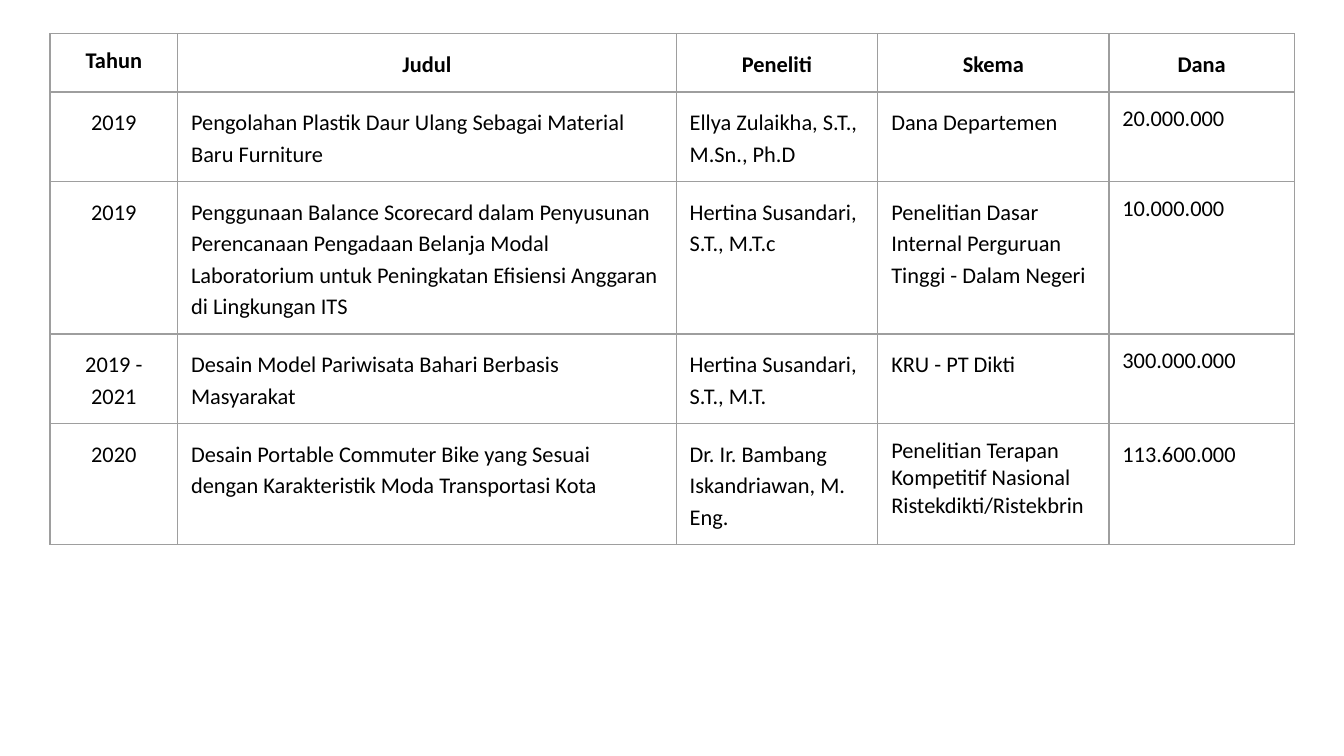
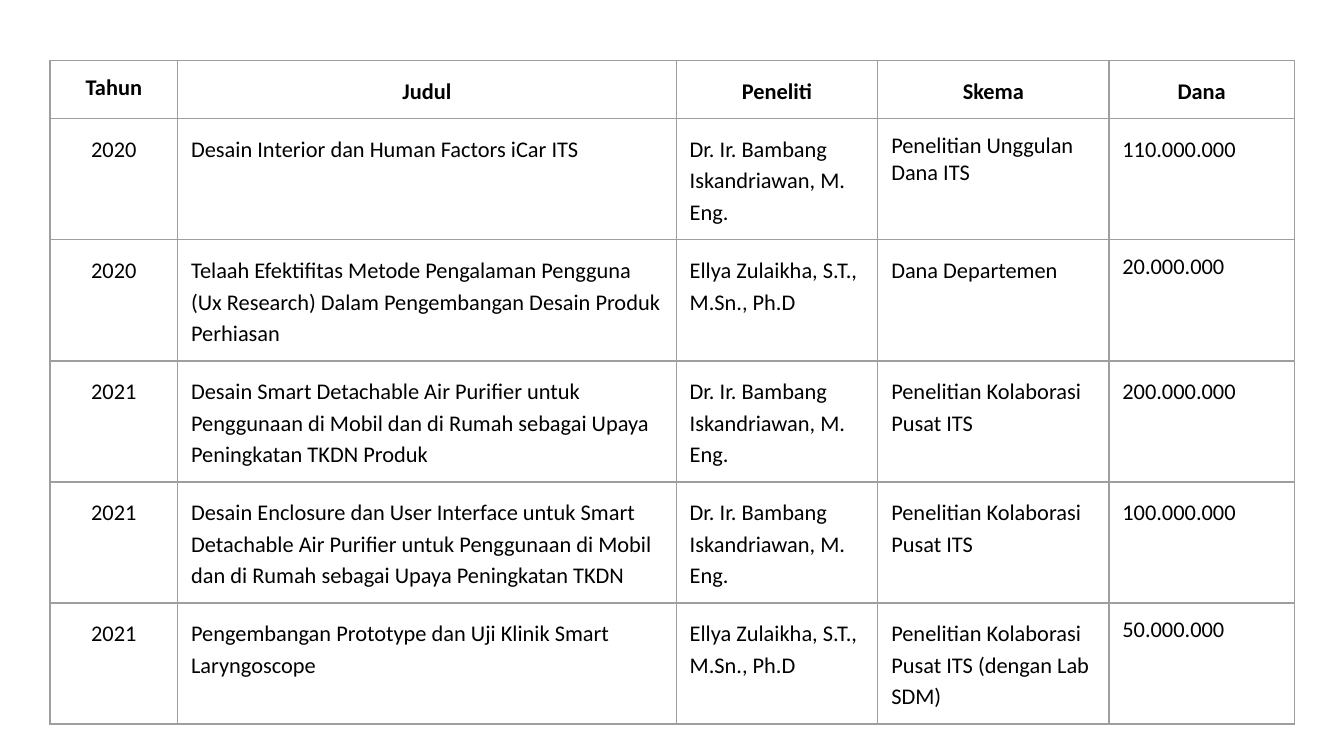
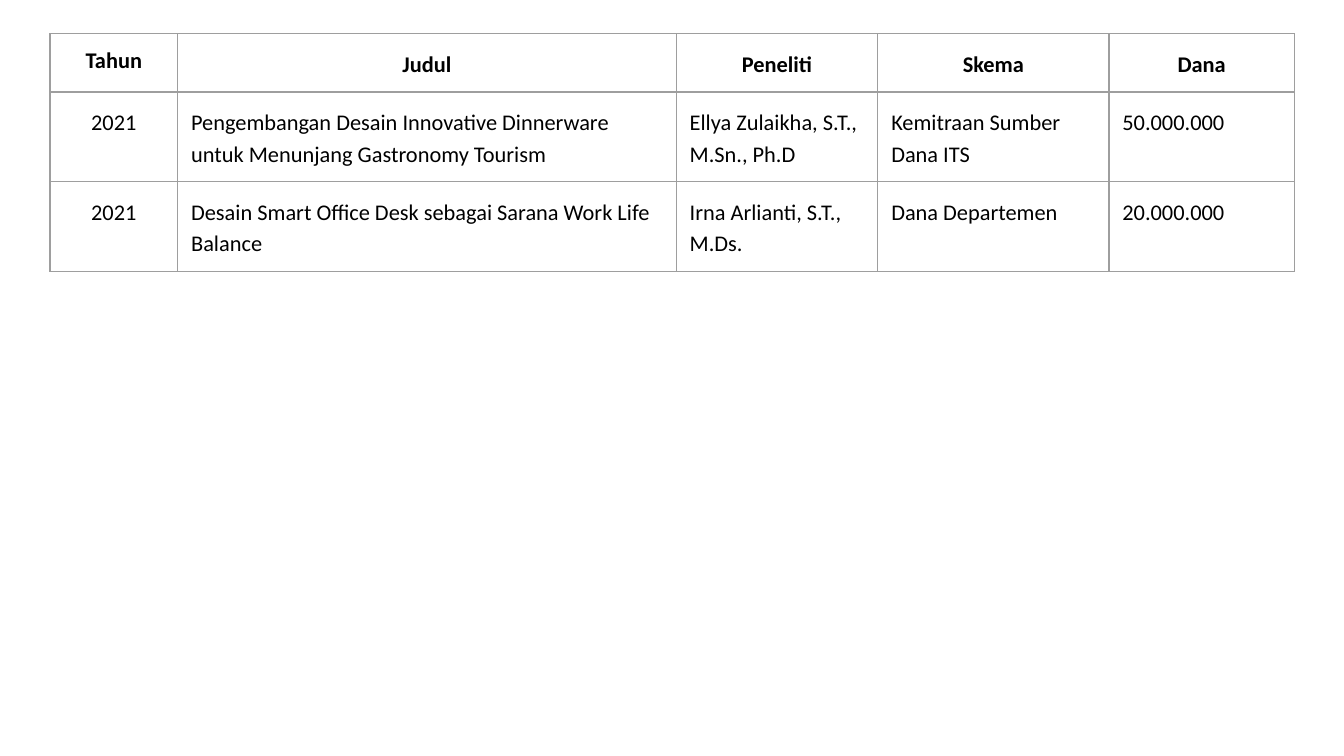
from lxml.etree import SubElement
from pptx import Presentation
from pptx.dml.color import RGBColor
from pptx.enum.text import PP_ALIGN as Align
from pptx.oxml.ns import qn
from pptx.util import Pt

HEADINGS = ("Tahun", "Judul", "Peneliti", "Skema", "Dana")
COLUMN_WIDTHS = (68.4, 267.1, 108, 123.8, 99.4)
BAMBANG = "Dr. Ir. Bambang Iskandriawan, M. Eng."
ELLYA = "Ellya Zulaikha, S.T., M.Sn., Ph.D"

GRANT_PAGES = [
    {"top": 18, "height": 267, "grants": [
        ("2019", "Pengolahan Plastik Daur Ulang Sebagai Material Baru Furniture",
         ELLYA, "Dana Departemen", "20.000.000"),
        ("2019", "Penggunaan Balance Scorecard dalam Penyusunan Perencanaan Pengadaan Belanja Modal "
         "Laboratorium untuk Peningkatan Efisiensi Anggaran di Lingkungan ITS",
         "Hertina Susandari, S.T., M.T.c",
         "Penelitian Dasar Internal Perguruan Tinggi - Dalam Negeri", "10.000.000"),
        ("2019 - 2021", "Desain Model Pariwisata Bahari Berbasis Masyarakat",
         "Hertina Susandari, S.T., M.T.", "KRU - PT Dikti", "300.000.000"),
        ("2020", "Desain Portable Commuter Bike yang Sesuai dengan Karakteristik Moda Transportasi Kota",
         BAMBANG, "Penelitian Terapan Kompetitif Nasional Ristekdikti/Ristekbrin", "113.600.000"),
    ], "single_spaced": {(1, "Dana"), (2, "Dana"), (3, "Dana"), (4, "Skema")}},
    {"top": 32.4, "height": 347, "grants": [
        ("2020", "Desain Interior dan Human Factors iCar ITS",
         BAMBANG, "Penelitian Unggulan Dana ITS", "110.000.000"),
        ("2020", "Telaah Efektifitas Metode Pengalaman Pengguna (Ux Research) "
         "Dalam Pengembangan Desain Produk Perhiasan",
         ELLYA, "Dana Departemen", "20.000.000"),
        ("2021", "Desain Smart Detachable Air Purifier untuk Penggunaan di Mobil dan di Rumah "
         "sebagai Upaya Peningkatan TKDN Produk",
         BAMBANG, "Penelitian Kolaborasi Pusat ITS", "200.000.000"),
        ("2021", "Desain Enclosure dan User Interface untuk Smart Detachable Air Purifier "
         "untuk Penggunaan di Mobil dan di Rumah sebagai Upaya Peningkatan TKDN",
         BAMBANG, "Penelitian Kolaborasi Pusat ITS", "100.000.000"),
        ("2021", "Pengembangan Prototype dan Uji Klinik Smart Laryngoscope",
         ELLYA, "Penelitian Kolaborasi Pusat ITS (dengan Lab SDM)", "50.000.000"),
    ], "single_spaced": {(1, "Skema"), (2, "Dana"), (5, "Dana")}},
    {"top": 18, "height": 124.5, "grants": [
        ("2021", "Pengembangan Desain Innovative Dinnerware untuk Menunjang Gastronomy Tourism",
         ELLYA, "Kemitraan Sumber Dana ITS", "50.000.000"),
        ("2021", "Desain Smart Office Desk sebagai Sarana Work Life Balance",
         "Irna Arlianti, S.T., M.Ds.", "Dana Departemen", "20.000.000"),
    ], "single_spaced": set()},
]

FONT, TEXT_SIZE, TEXT_COLOUR = "Calibri", 12, "000000"
BORDER_COLOUR, BORDER_WIDTH = "9E9E9E", 0.75
TABLE_LEFT, HEADING_HEIGHT, GRANT_HEIGHT, CELL_INSET = 26.8, 31, 30.2, 7.2


def colour(hex_code):
    return RGBColor.from_string(hex_code)


def write(cell, text, bold=False, align=Align.LEFT, spacing=None):
    cell.margin_left = cell.margin_right = Pt(CELL_INSET)
    cell.margin_top = cell.margin_bottom = Pt(CELL_INSET)
    paragraph = cell.text_frame.paragraphs[0]
    paragraph.alignment = align
    paragraph.line_spacing = spacing
    run = paragraph.add_run()
    run.text = text
    run.font.name = FONT
    run.font.size = Pt(TEXT_SIZE)
    run.font.bold = bold
    run.font.color.rgb = colour(TEXT_COLOUR)


def outline(cell):
    properties = cell._tc.get_or_add_tcPr()
    for side in ("a:lnL", "a:lnR", "a:lnT", "a:lnB"):
        border = SubElement(properties, qn(side), w=str(Pt(BORDER_WIDTH)))
        solid = SubElement(border, qn("a:solidFill"))
        SubElement(solid, qn("a:srgbClr"), val=BORDER_COLOUR)
    cell.fill.background()


def add_grants(slide, page):
    rows = [HEADINGS] + page["grants"]
    frame = slide.shapes.add_table(
        len(rows), len(HEADINGS), Pt(TABLE_LEFT), Pt(page["top"]),
        Pt(sum(COLUMN_WIDTHS)), Pt(page["height"]))
    table = frame.table
    table.first_row = table.horz_banding = False
    for column, width in zip(table.columns, COLUMN_WIDTHS):
        column.width = Pt(width)
    single_spaced = page["single_spaced"] | {(0, "Tahun")}
    for r, row in enumerate(rows):
        table.rows[r].height = Pt(GRANT_HEIGHT if r else HEADING_HEIGHT)
        for c, (heading, text) in enumerate(zip(HEADINGS, row)):
            cell = table.cell(r, c)
            centred = r == 0 or heading == "Tahun"
            write(cell, text, bold=r == 0,
                  align=Align.CENTER if centred else Align.LEFT,
                  spacing=None if (r, heading) in single_spaced else 1.15)
            outline(cell)
    frame.height = Pt(page["height"])


def main():
    deck = Presentation()
    deck.slide_width, deck.slide_height = Pt(720), Pt(405)
    for page in GRANT_PAGES:
        add_grants(deck.slides.add_slide(deck.slide_layouts[6]), page)
    deck.save("out.pptx")


if __name__ == "__main__":
    main()
